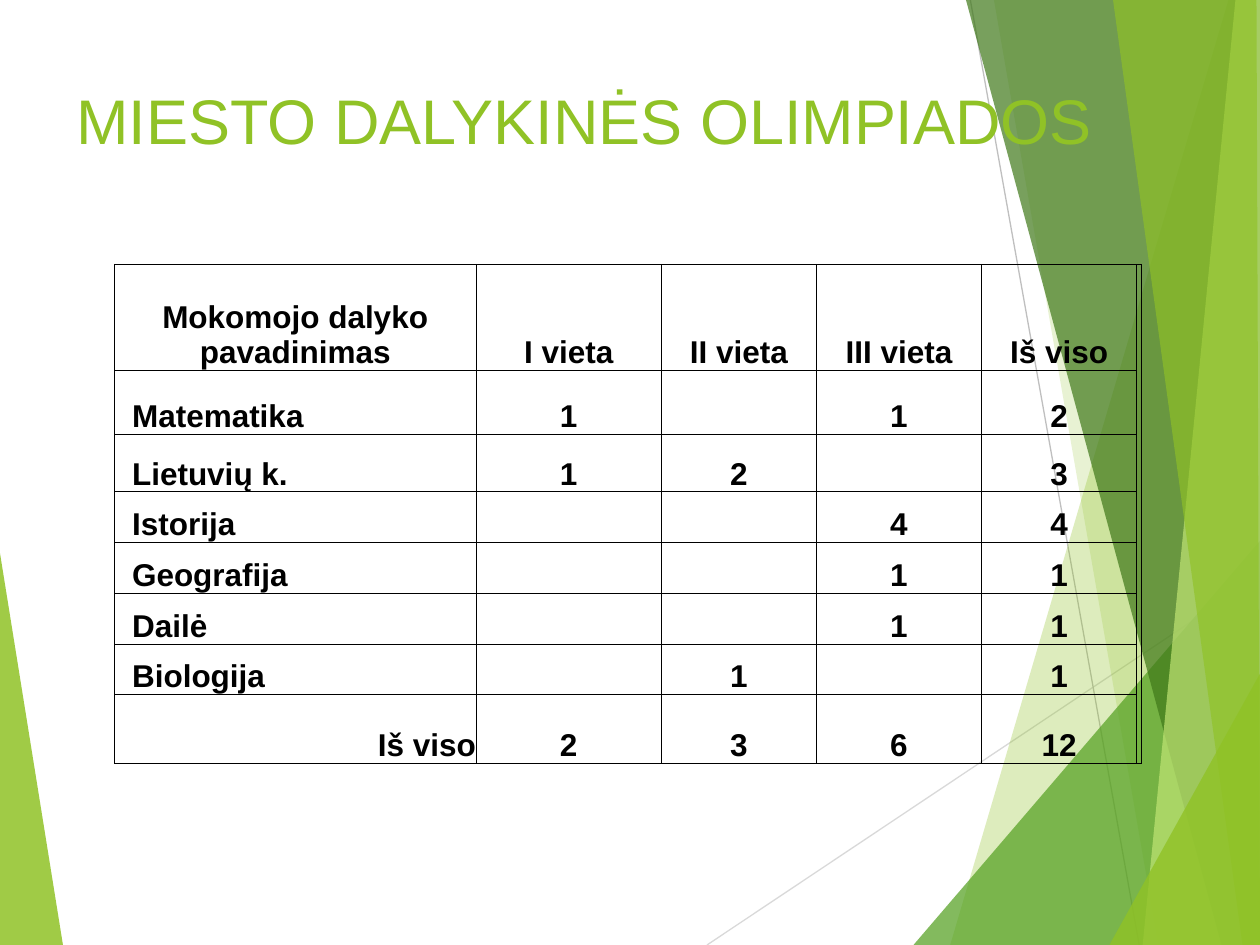
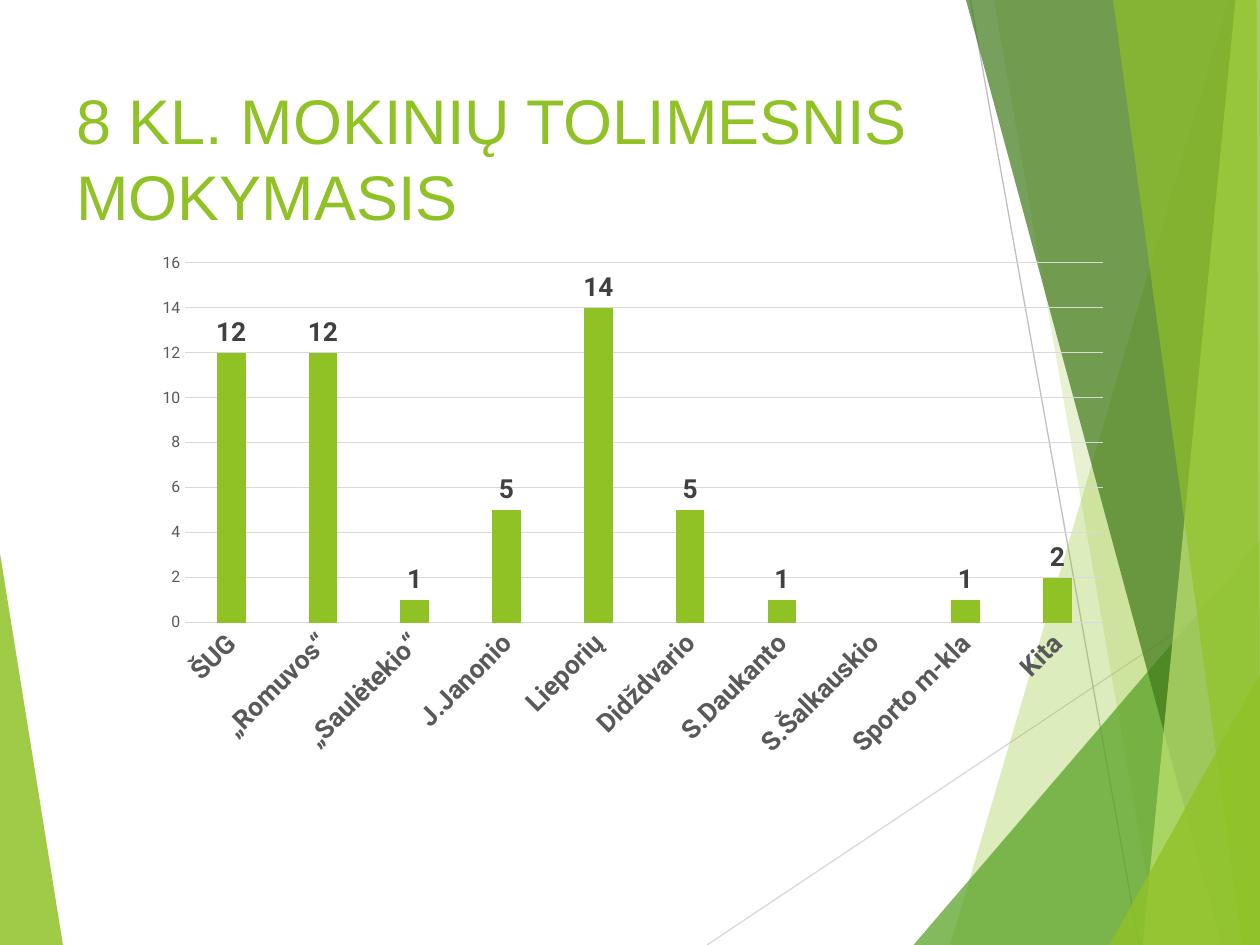
"""Builds two slides on school olympiads and pupils' further studies."""
from lxml.etree import SubElement
from pptx import Presentation
from pptx.chart.data import CategoryChartData
from pptx.dml.color import RGBColor
from pptx.enum.chart import XL_CHART_TYPE, XL_LABEL_POSITION, XL_TICK_MARK
from pptx.enum.shapes import MSO_CONNECTOR
from pptx.enum.text import MSO_ANCHOR, PP_ALIGN
from pptx.oxml import parse_xml
from pptx.oxml.ns import nsdecls, qn
from pptx.util import Pt

COLORS = {
    "lime": "90C226", "green": "54A021", "dark": "3F7819", "pale": "C0E474",
    "black": "000000", "label": "404040", "axis": "595959",
    "line": "D9D9D9", "line_dark": "BFBFBF",
}
FACETS = [
    ("lime", 85, [(0, 316), (35.5, 540), (0, 540)]),
    ("lime", 30, [(702, 0), (543, 540), (720, 540), (720, 0)]),
    ("lime", 20, [(567.5, 0), (661.5, 540), (720, 540), (720, 0)]),
    ("green", 72, [(522.5, 540), (720, 309), (720, 540)]),
    ("dark", 70, [(552, 0), (698.5, 540), (720, 540), (720, 0)]),
    ("pale", 70, [(706.5, 0), (653, 540), (720, 540), (720, 0)]),
    ("lime", 65, [(635.5, 0), (710, 540), (720, 540), (718.5, 0)]),
    ("lime", 80, [(634.5, 540), (720, 385), (720, 540)]),
]
LINES = [("line", 404, 540, 720, 329), ("line_dark", 554.5, 0, 651, 540)]
TITLES = ["MIESTO DALYKINĖS OLIMPIADOS", "8 KL. MOKINIŲ TOLIMESNIS MOKYMASIS"]
COLS = [206.5, 106, 88.5, 94.5, 88.5, 2.5]
ROWS = [60.5, 36.5, 33, 29, 29, 29, 29, 39]
RESULTS = [
    ["Mokomojo dalyko pavadinimas", "I vieta", "II vieta", "III vieta", "Iš viso"],
    ["Matematika", "1", "", "1", "2"],
    ["Lietuvių k.", "1", "2", "", "3"],
    ["Istorija", "", "", "4", "4"],
    ["Geografija", "", "", "1", "1"],
    ["Dailė", "", "", "1", "1"],
    ["Biologija", "", "1", "", "1"],
    ["Iš viso", "2", "3", "6", "12"],
]
SCHOOLS = {
    "ŠUG": 12, "„Romuvos“": 12, "„Saulėtekio“": 1, "J.Janonio": 5, "Lieporių": 14,
    "Didždvario": 5, "S.Daukanto": 1, "S.Šalkauskio": None, "Sporto m-kla": 1, "Kita": 2,
}


def rgb(name):
    return RGBColor.from_string(COLORS[name])


def style_font(font, name, size, color, bold=False):
    font.name, font.size, font.bold = name, Pt(size), bold
    font.color.rgb = rgb(color)


prs = Presentation()
prs.slide_width, prs.slide_height = Pt(720), Pt(540)
layout = prs.slide_layouts[5]
slides = []
for title in TITLES:
    s = prs.slides.add_slide(layout)
    sp = s.shapes.title
    sp.left, sp.top, sp.width, sp.height = Pt(36.5), Pt(43), Pt(644.5), Pt(83)
    tf = sp.text_frame
    tf.text = title
    tf.word_wrap = True
    tf.vertical_anchor = MSO_ANCHOR.TOP
    p = tf.paragraphs[0]
    p.alignment = PP_ALIGN.LEFT
    style_font(p.runs[0].font, "Arial", 36, "lime")
    slides.append(s)
olympiads, studies = slides

decor = []
for color, *ends in LINES:
    line = olympiads.shapes.add_connector(MSO_CONNECTOR.STRAIGHT, *map(Pt, ends))
    line.line.color.rgb = rgb(color)
    line.line.width = Pt(0.75)
    SubElement(line._element.spPr, qn("a:effectLst"))
    decor.append(line)
for color, alpha, points in FACETS:
    builder = olympiads.shapes.build_freeform(*points[0], scale=Pt(1))
    builder.add_line_segments(points[1:], close=True)
    sp = builder.convert_to_shape()
    sp.shadow.inherit = False
    sp.fill.solid()
    sp.fill.fore_color.rgb = rgb(color)
    sp.line.fill.background()
    clr = sp._element.spPr.find(qn("a:solidFill"))[0]
    SubElement(clr, qn("a:alpha"), val=str(alpha * 1000))
    decor.append(sp)
for i, sp in enumerate(decor):
    layout.shapes._spTree.insert(2 + i, sp._element)

table = olympiads.shapes.add_table(
    len(ROWS), len(COLS), Pt(65.5), Pt(151), Pt(sum(COLS)), Pt(sum(ROWS))).table
table.first_row = table.horz_banding = False
for col, width in zip(table.columns, COLS):
    col.width = Pt(width)
for row, height in zip(table.rows, ROWS):
    row.height = Pt(height)
for r, row in enumerate(table.rows):
    for c, cell in enumerate(row.cells):
        cell.margin_left = cell.margin_right = cell.margin_top = cell.margin_bottom = 0
        cell.vertical_anchor = MSO_ANCHOR.BOTTOM
        cell.fill.background()
        for i, side in enumerate(("lnL", "lnR", "lnT", "lnB")):
            cell._tc.tcPr.insert(i, parse_xml(
                f'<a:{side} {nsdecls("a")} w="6350"><a:solidFill>'
                f'<a:srgbClr val="{COLORS["black"]}"/></a:solidFill></a:{side}>'))
        p = cell.text_frame.paragraphs[0]
        p.alignment = PP_ALIGN.CENTER
        if c == 0 and r == len(ROWS) - 1:
            p.alignment = PP_ALIGN.RIGHT
        elif c == 0 and r > 0:
            p.alignment = PP_ALIGN.LEFT
            cell.margin_left = Pt(10)
        if c < len(RESULTS[r]):
            p.text = RESULTS[r][c]
        style_font(p.font, "Arial", 18, "black", True)
        for run in p.runs:
            style_font(run.font, "Arial", 18, "black", True)
table.cell(0, 5).merge(table.cell(len(ROWS) - 1, 5))

data = CategoryChartData()
data.categories = list(SCHOOLS)
data.add_series("Series 1", list(SCHOOLS.values()))
chart = studies.shapes.add_chart(
    XL_CHART_TYPE.COLUMN_CLUSTERED, Pt(49.5), Pt(132.5), Pt(593.5), Pt(340), data).chart
chart.has_title = chart.has_legend = False
style_font(chart.font, "Roboto", 10, "black")
plot = chart.plots[0]
plot.gap_width, plot.overlap, plot.vary_by_categories = 219, -27, False
bars = plot.series[0]
bars.format.fill.solid()
bars.format.fill.fore_color.rgb = rgb("lime")
labels = bars.data_labels
labels.show_value = True
labels.position = XL_LABEL_POSITION.OUTSIDE_END
style_font(labels.font, "Roboto", 15, "label", True)

schools, pupils = chart.category_axis, chart.value_axis
for axis in (schools, pupils):
    axis.major_tick_mark = axis.minor_tick_mark = XL_TICK_MARK.NONE
style_font(schools.tick_labels.font, "Roboto", 15, "axis", True)
style_font(pupils.tick_labels.font, "Roboto", 9, "axis")
schools._element.find(qn("c:txPr")).find(qn("a:bodyPr")).set("rot", "-2700000")
pupils.minimum_scale, pupils.maximum_scale, pupils.major_unit = 0, 16, 2
pupils.format.line.fill.background()
for line in (schools.format.line, pupils.major_gridlines.format.line):
    line.color.rgb = rgb("line")
    line.width = Pt(0.75)

area = chart._chartSpace.chart.plotArea
for old in area.findall(qn("c:layout")):
    area.remove(old)
box = SubElement(area, qn("c:layout"))
area.insert(0, box)
manual = SubElement(box, qn("c:manualLayout"))
for tag, val in [("layoutTarget", "inner"), ("xMode", "edge"), ("yMode", "edge"),
                 ("x", "0.095"), ("y", "0.052"), ("w", "0.884"), ("h", "0.605")]:
    SubElement(manual, qn(f"c:{tag}"), val=val)

prs.save("out.pptx")
